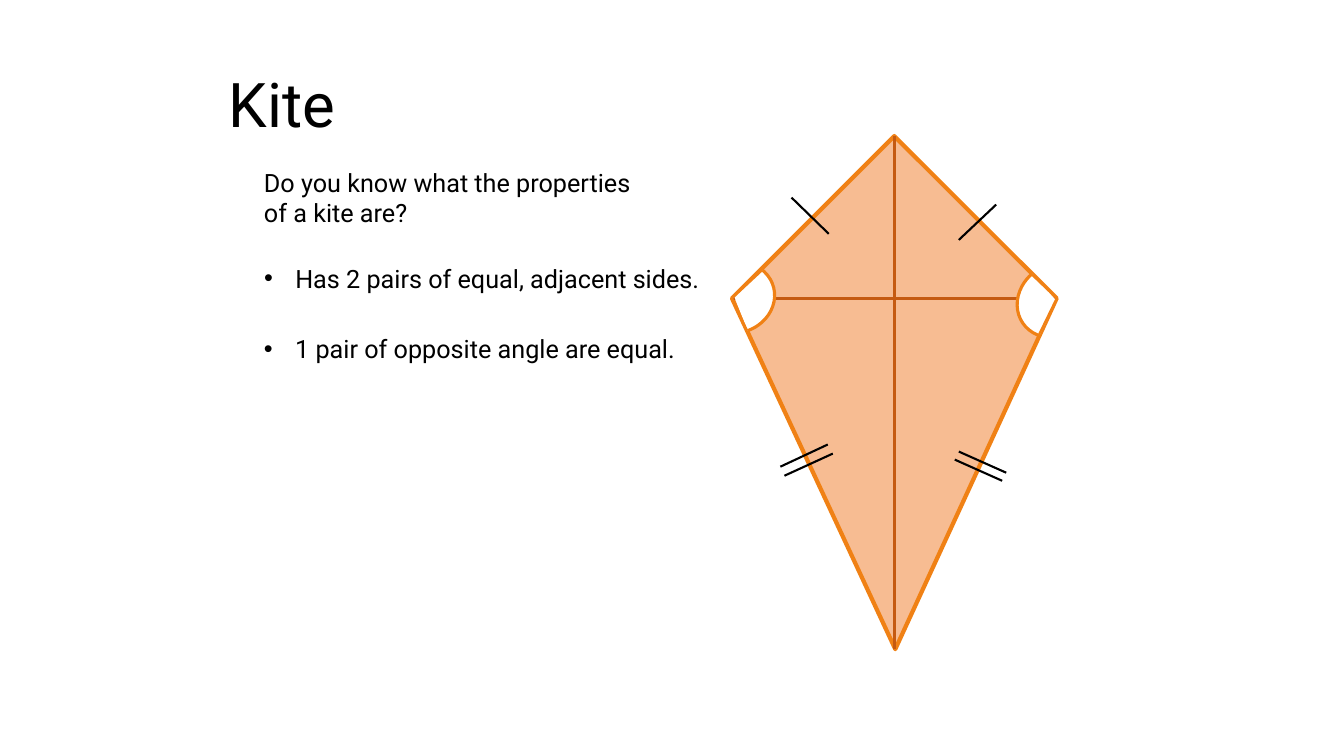
from typing import NamedTuple

from lxml.etree import SubElement
from pptx import Presentation
from pptx.dml.color import RGBColor
from pptx.enum.shapes import MSO_CONNECTOR as Link, MSO_SHAPE as Shape
from pptx.enum.text import MSO_ANCHOR as Anchor, MSO_AUTO_SIZE as Fit
from pptx.oxml.ns import qn
from pptx.util import Inches, Pt

BLACK = RGBColor(0x00, 0x00, 0x00)
WHITE = RGBColor(0xFF, 0xFF, 0xFF)
PEACH = RGBColor(0xF7, 0xBC, 0x92)
ORANGE = RGBColor(0xF0, 0x81, 0x15)
RUST = RGBColor(0xC5, 0x5A, 0x11)
FONT = "Roboto"
INDENT = 0.31


class Point(NamedTuple):
    x: float
    y: float


class Line(NamedTuple):
    start: Point
    end: Point
    color: RGBColor
    width: float


class Text(NamedTuple):
    words: str
    left: float
    top: float
    width: float
    height: float
    size: int = 18
    bullet: bool = False


class Angle(NamedTuple):
    """A white sector at a corner, with the ends of its two sides."""
    corner: Point
    left: float
    top: float
    turn: float
    ends: tuple[Point, Point]


TOP, RIGHT = Point(8.87, 1.35), Point(10.48, 2.96)
BOTTOM, LEFT = Point(8.88, 6.44), Point(7.26, 2.96)

DIAGONALS = [
    Line(TOP, Point(TOP.x, BOTTOM.y), RUST, 2.25),
    Line(RIGHT, LEFT, RUST, 2.25),
]
TICKS = [
    Line(Point(*start), Point(*end), BLACK, 1.5)
    for start, end in [
        ((7.85, 1.96), (8.22, 2.32)),
        ((9.88, 2.03), (9.51, 2.38)),
        ((8.26, 4.5), (7.78, 4.72)),
        ((8.21, 4.41), (7.74, 4.63)),
        ((9.47, 4.56), (9.94, 4.77)),
        ((9.51, 4.48), (9.98, 4.69)),
    ]
]
ANGLES = [
    Angle(LEFT, 6.93, 2.55, 76.3, (Point(7.41, 3.28), Point(7.56, 2.68))),
    Angle(RIGHT, 10.12, 2.58, 235.8, (Point(10.23, 2.72), Point(10.3, 3.33))),
]
TITLE = Text("Kite", 2.17, 0.52, 8.99, 1.09, size=44)
NOTES = [
    Text("Do you know what the properties of a kite are?", 2.52, 1.61, 4, 0.71),
    Text("Has 2 pairs of equal, adjacent sides.", 2.52, 2.56, 4.58, 0.4, bullet=True),
    Text("1 pair of opposite angle are equal.", 2.52, 3.26, 4.33, 0.4, bullet=True),
]


def add_text(shapes, text: Text):
    box = shapes.add_textbox(*map(Inches, text[1:5]))
    frame = box.text_frame
    frame.text = text.words
    frame.word_wrap = not text.bullet
    para = frame.paragraphs[0]
    font = para.runs[0].font
    font.name, font.size = FONT, Pt(text.size)
    font.color.rgb = BLACK
    if text.bullet:
        props = para._p.get_or_add_pPr()
        props.set("marL", str(Inches(INDENT)))
        props.set("indent", str(-Inches(INDENT)))
        SubElement(props, qn("a:buFont"), typeface="Arial")
        SubElement(props, qn("a:buChar"), char="•")
    return frame


def add_line(shapes, line: Line) -> None:
    link = shapes.add_connector(Link.STRAIGHT, *map(Inches, line.start + line.end))
    link.line.color.rgb = line.color
    link.line.width = Pt(line.width)
    SubElement(link._element.spPr, qn("a:effectLst"))


def paint(shape, fill: RGBColor, width: float) -> None:
    shape.shadow.inherit = False
    shape.fill.solid()
    shape.fill.fore_color.rgb = fill
    shape.line.color.rgb = ORANGE
    shape.line.width = Pt(width)


def add_kite(shapes) -> None:
    start, *rest = [
        (Inches(x), Inches(y)) for x, y in (LEFT, TOP, RIGHT, BOTTOM)]
    pen = shapes.build_freeform(*start)
    pen.add_line_segments(rest, close=True)
    paint(pen.convert_to_shape(), PEACH, 3)


def add_angle(shapes, angle: Angle) -> None:
    arc = shapes.add_shape(
        Shape.ARC, *map(Inches, (angle.left, angle.top, 0.71, 0.8)))
    arc.adjustments[0], arc.adjustments[1] = 143.75, 211.37
    arc.rotation = angle.turn
    paint(arc, WHITE, 2.25)
    for end in angle.ends:
        add_line(shapes, Line(angle.corner, end, ORANGE, 1.5))


def main() -> None:
    deck = Presentation()
    deck.slide_width, deck.slide_height = Inches(13.33), Inches(7.5)
    shapes = deck.slides.add_slide(deck.slide_layouts[6]).shapes

    title = add_text(shapes, TITLE)
    title.vertical_anchor = Anchor.MIDDLE
    title.paragraphs[0].line_spacing = 0.9
    add_kite(shapes)
    for line in DIAGONALS + TICKS:
        add_line(shapes, line)
    for note in NOTES:
        add_text(shapes, note).auto_size = Fit.SHAPE_TO_FIT_TEXT
    for angle in ANGLES:
        add_angle(shapes, angle)
    deck.save("out.pptx")


if __name__ == "__main__":
    main()
